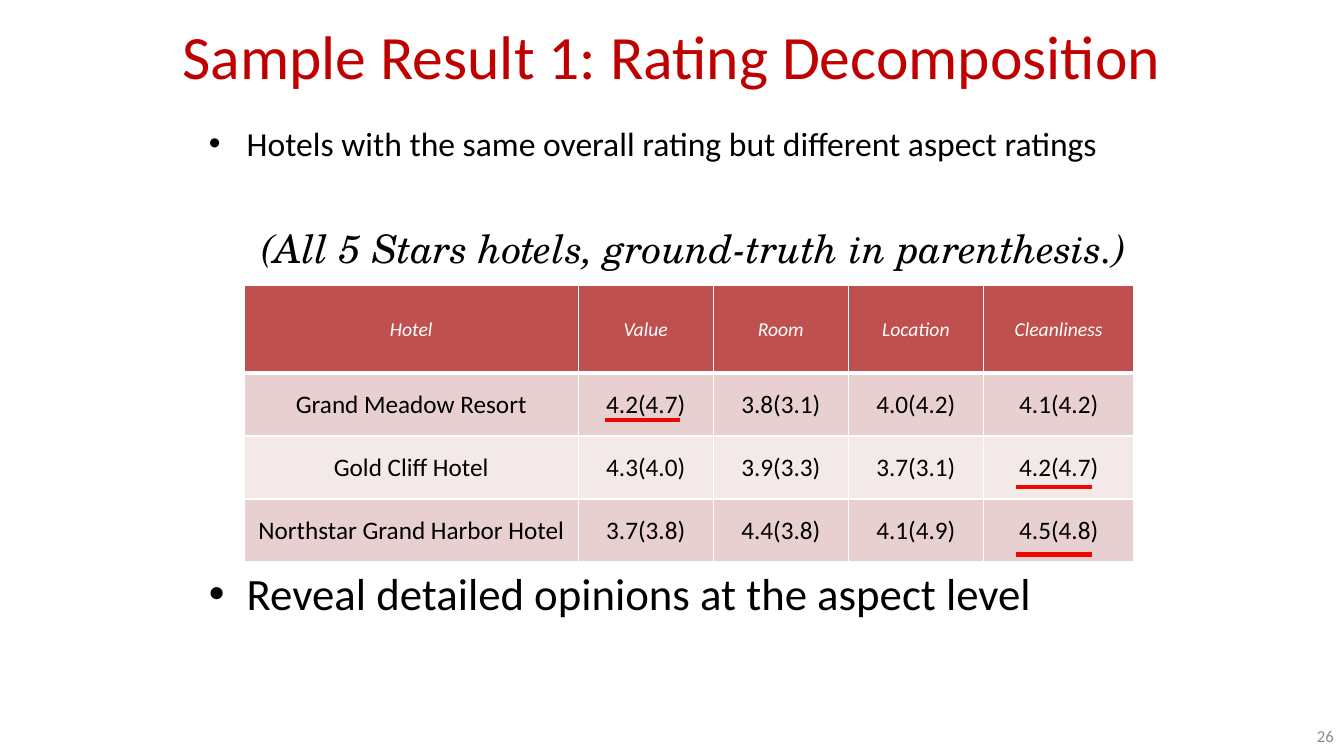
from dataclasses import dataclass

from lxml.etree import SubElement
from pptx import Presentation
from pptx.dml.color import RGBColor
from pptx.enum.shapes import MSO_CONNECTOR
from pptx.enum.text import MSO_ANCHOR, MSO_AUTO_SIZE, PP_ALIGN
from pptx.oxml.ns import qn
from pptx.slide import Slide
from pptx.table import _Cell
from pptx.text.text import TextFrame, _Paragraph
from pptx.util import Pt

BLACK = RGBColor(0x00, 0x00, 0x00)
WHITE = RGBColor(0xFF, 0xFF, 0xFF)
GRAY = RGBColor(0x8C, 0x8C, 0x8C)
TITLE = RGBColor(0xC0, 0x00, 0x00)
HEAD = RGBColor(0xC0, 0x50, 0x4D)
BANDS = (RGBColor(0xE8, 0xD0, 0xD0), RGBColor(0xF4, 0xE9, 0xE9))
MARK = RGBColor(0xEE, 0x08, 0x02)


@dataclass(frozen=True)
class Style:
    size: float
    color: RGBColor = BLACK
    face: str = "Calibri"
    italic: bool = False
    align: PP_ALIGN = PP_ALIGN.LEFT


@dataclass(frozen=True)
class Box:
    left: float
    top: float
    width: float
    height: float

    def place(self) -> tuple[Pt, Pt, Pt, Pt]:
        return Pt(self.left), Pt(self.top), Pt(self.width), Pt(self.height)


@dataclass(frozen=True)
class Rule:
    """A red line that marks one rating."""
    left: float
    top: float
    width: float = 54


COLS = (238.5, 96.5, 96.5, 96.5, 107.5)
ROWS = (62.5, 45, 45, 45)
RATINGS = (
    ("Hotel", "Value", "Room", "Location", "Cleanliness"),
    ("Grand Meadow Resort", "4.2(4.7)", "3.8(3.1)", "4.0(4.2)", "4.1(4.2)"),
    ("Gold Cliff Hotel", "4.3(4.0)", "3.9(3.3)", "3.7(3.1)", "4.2(4.7)"),
    ("Northstar Grand Harbor Hotel", "3.7(3.8)", "4.4(3.8)", "4.1(4.9)", "4.5(4.8)"),
)
RULES = (Rule(432, 300), Rule(726, 348), Rule(726, 396))


def format_text(para: _Paragraph, style: Style) -> None:
    para.alignment = style.align
    for run in para.runs:
        font = run.font
        font.size = Pt(style.size)
        font.name = style.face
        font.italic = style.italic
        font.color.rgb = style.color


def set_frame(frame: TextFrame, anchor: MSO_ANCHOR) -> None:
    frame.word_wrap = True
    frame.auto_size = MSO_AUTO_SIZE.NONE
    frame.vertical_anchor = anchor


def add_title(slide: Slide, text: str) -> None:
    title = slide.shapes.title
    title.left, title.top, title.width, title.height = Box(0, 0, 960, 78).place()
    set_frame(title.text_frame, MSO_ANCHOR.MIDDLE)
    title.text_frame.text = text
    format_text(title.text_frame.paragraphs[0], Style(44, TITLE, align=PP_ALIGN.CENTER))


def add_points(slide: Slide) -> None:
    """Fill the body with two points, spaced to leave room for the table."""
    body = slide.placeholders[1]
    body.left, body.top, body.width, body.height = Box(142, 84, 688, 402).place()
    frame = body.text_frame
    set_frame(frame, MSO_ANCHOR.TOP)
    frame.text = ("Hotels with the same overall rating but different aspect ratings\n"
                  "Reveal detailed opinions at the aspect level")
    for para, size, gap in zip(frame.paragraphs, (24, 32), (0, 288)):
        props = para._p.get_or_add_pPr()
        props.set("marL", str(Pt(27)))
        props.set("indent", str(Pt(-27)))
        para.space_before = Pt(gap)
        format_text(para, Style(size))


def add_label(slide: Slide, box: Box, text: str, style: Style, anchor: MSO_ANCHOR) -> None:
    frame = slide.shapes.add_textbox(*box.place()).text_frame
    set_frame(frame, anchor)
    frame.text = text
    format_text(frame.paragraphs[0], style)


def set_borders(cell: _Cell, top: float, bottom: float) -> None:
    props = cell._tc.get_or_add_tcPr()
    edges = (("L", 1), ("R", 1), ("T", top), ("B", bottom))
    for place, (side, width) in enumerate(edges):
        line = SubElement(props, qn(f"a:ln{side}"), w=str(Pt(width)))
        fill = SubElement(line, qn("a:solidFill"))
        SubElement(fill, qn("a:srgbClr"), val=str(WHITE))
        props.insert(place, line)


def add_ratings(slide: Slide) -> None:
    box = Box(174.5, 204, sum(COLS), sum(ROWS))
    table = slide.shapes.add_table(len(ROWS), len(COLS), *box.place()).table
    for col, width in zip(table.columns, COLS):
        col.width = Pt(width)
    for row, height in zip(table.rows, ROWS):
        row.height = Pt(height)
    header = Style(14, WHITE, italic=True, align=PP_ALIGN.CENTER)
    value = Style(18, align=PP_ALIGN.CENTER)
    for r, texts in enumerate(RATINGS):
        for c, text in enumerate(texts):
            cell = table.cell(r, c)
            cell.text_frame.text = text
            cell.vertical_anchor = MSO_ANCHOR.MIDDLE
            cell.fill.solid()
            cell.fill.fore_color.rgb = BANDS[(r - 1) % 2] if r else HEAD
            set_borders(cell, 3 if r == 1 else 1, 1 if r else 3)
            format_text(cell.text_frame.paragraphs[0], value if r else header)


def add_rule(slide: Slide, rule: Rule) -> None:
    line = slide.shapes.add_connector(
        MSO_CONNECTOR.STRAIGHT, Pt(rule.left), Pt(rule.top),
        Pt(rule.left + rule.width), Pt(rule.top))
    line.line.color.rgb = MARK
    line.line.width = Pt(3)
    SubElement(line._element.spPr, qn("a:effectLst"))


def main() -> None:
    deck = Presentation()
    deck.slide_width, deck.slide_height = Pt(960), Pt(540)
    slide = deck.slides.add_slide(deck.slide_layouts[1])
    add_title(slide, "Sample Result 1: Rating Decomposition")
    add_points(slide)
    add_ratings(slide)
    add_label(slide, Box(180, 157, 660, 41),
              "(All 5 Stars hotels, ground-truth in parenthesis.)",
              Style(28, face="TeX Gyre Schola", italic=True), MSO_ANCHOR.TOP)
    for rule in RULES:
        add_rule(slide, rule)
    add_label(slide, Box(736, 511, 224, 29), "26",
              Style(12, GRAY, align=PP_ALIGN.RIGHT), MSO_ANCHOR.MIDDLE)
    deck.save("out.pptx")


if __name__ == "__main__":
    main()
